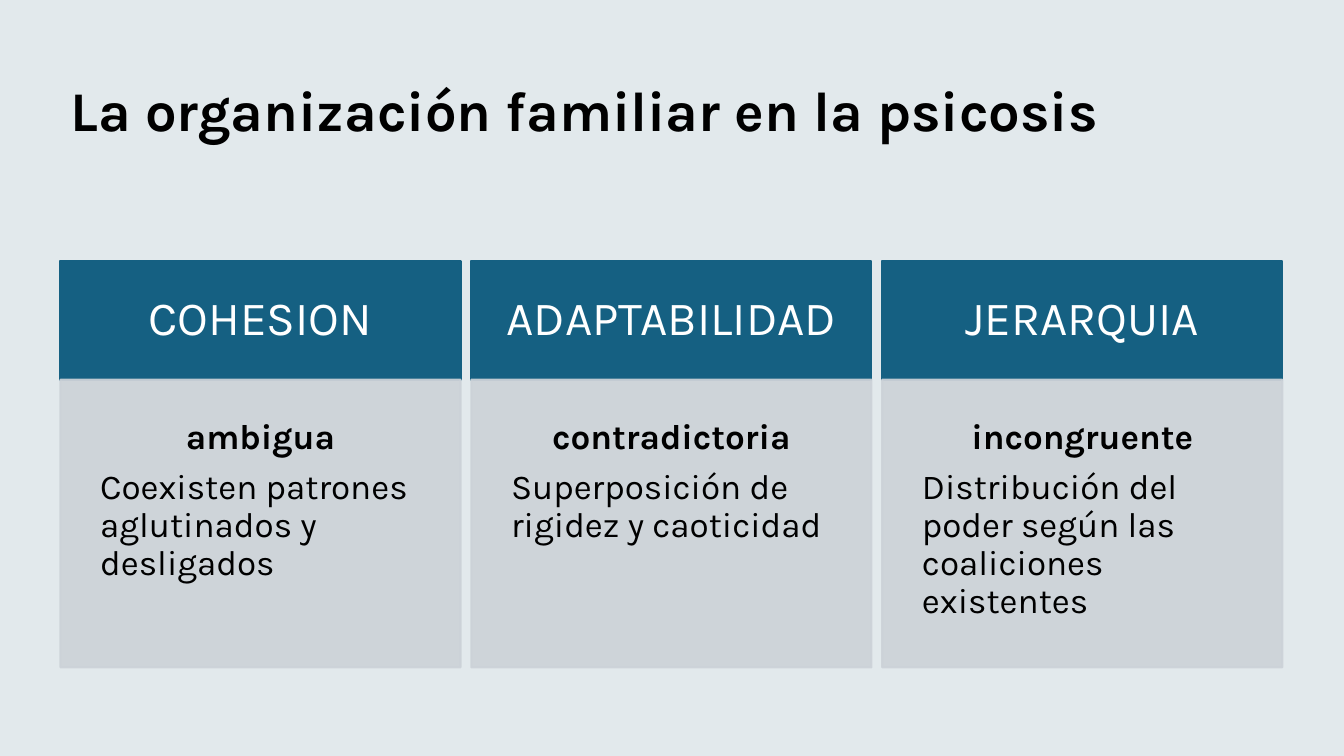
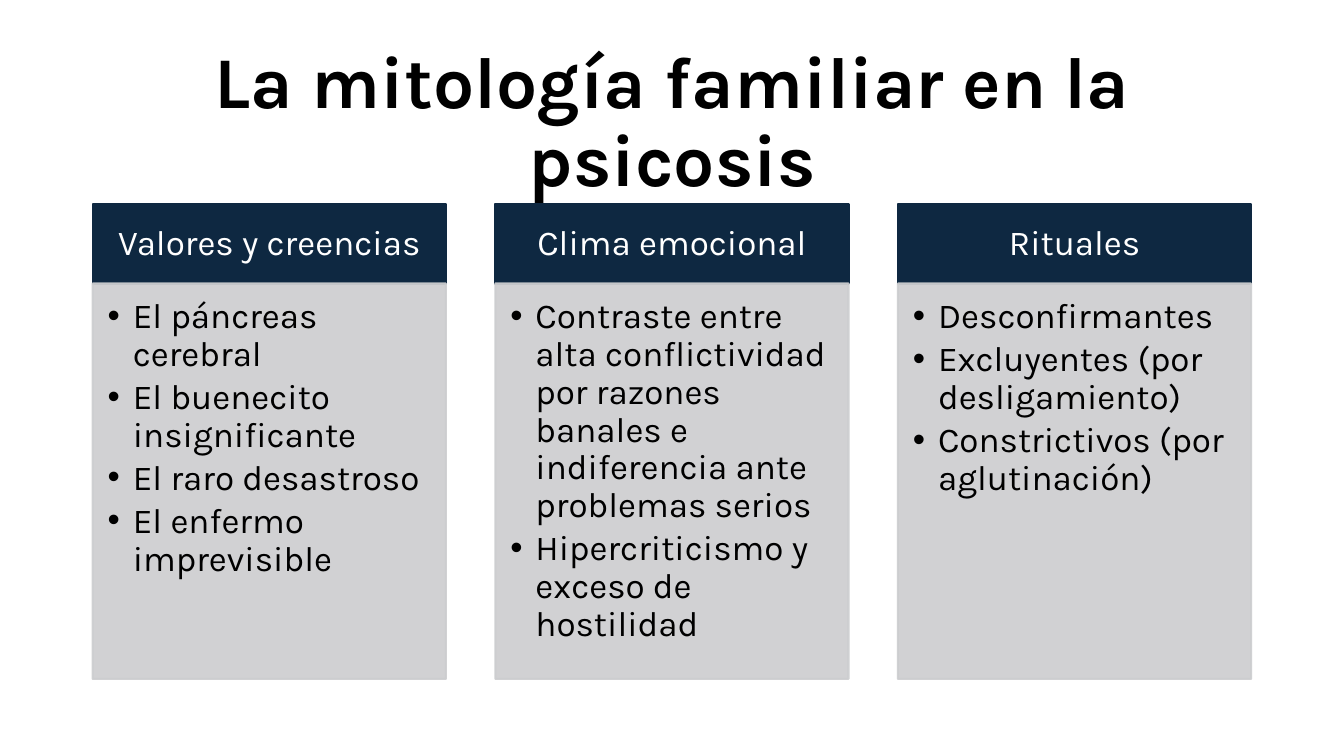
from dataclasses import dataclass

from lxml import etree
from pptx import Presentation
from pptx.dml.color import RGBColor
from pptx.enum import shapes, text
from pptx.oxml import ns
from pptx.util import Pt

FONT = "Karla"
BLACK = RGBColor(0x00, 0x00, 0x00)
WHITE = RGBColor(0xFF, 0xFF, 0xFF)
PALE_BLUE = RGBColor(0xE2, 0xE9, 0xEC)
TEAL = RGBColor(0x15, 0x60, 0x82)
BLUE_GREY = RGBColor(0xCC, 0xD2, 0xD8)
NAVY = RGBColor(0x0E, 0x28, 0x41)
GREY = RGBColor(0xCC, 0xCD, 0xCF)

BODY_SIZE = 25
BODY_OPACITY = 90
LINE_SPACING = 0.9
BULLET_INDENT = 18

LEFT = text.PP_ALIGN.LEFT
CENTER = text.PP_ALIGN.CENTER
TOP = text.MSO_ANCHOR.TOP
MIDDLE = text.MSO_ANCHOR.MIDDLE


@dataclass(frozen=True)
class Box:
    left: float
    top: float
    width: float
    height: float


@dataclass(frozen=True)
class Line:
    wording: str
    size: float = BODY_SIZE
    color: RGBColor = BLACK
    bold: bool = False
    align: text.PP_ALIGN = LEFT
    space_after: float = 0
    bullet: bool = False


@dataclass(frozen=True)
class Column:
    heading: str
    lines: list[Line]


@dataclass(frozen=True)
class ColumnStyle:
    """Geometry and look of a row of headed columns, in points."""
    first: Box  # heading of the first column
    pitch: float
    body_height: float
    heading_size: float
    heading_color: RGBColor
    body_color: RGBColor
    heading_insets: tuple[float, float, float, float]
    body_insets: tuple[float, float, float, float]


@dataclass(frozen=True)
class Topic:
    title: Line
    title_box: Box
    background: RGBColor
    style: ColumnStyle
    columns: list[Column]


def trait(name: str, description: str) -> list[Line]:
    return [Line(name, bold=True, align=CENTER, space_after=8.75),
            Line(description, space_after=8.75)]


def bullets(*items: str) -> list[Line]:
    return [Line(item, space_after=3.75, bullet=True) for item in items]


TOPICS = [
    Topic(
        Line("La organización familiar en la psicosis", 40, bold=True),
        Box(43.2, 28.8, 873.4, 104.4),
        PALE_BLUE,
        ColumnStyle(Box(43.2, 186.2, 285.8, 85), 293.5, 205.5, 34, TEAL, BLUE_GREY,
                    (22.4, 22.4, 22.4, 22.4), (28.4, 28.4, 28.4, 28.4)),
        [
            Column("COHESION", trait("ambigua", "Coexisten patrones aglutinados y desligados")),
            Column("ADAPTABILIDAD", trait("contradictoria", "Superposición de rigidez y caoticidad")),
            Column("JERARQUIA", trait("incongruente",
                                      "Distribución del poder según las coaliciones existentes")),
        ],
    ),
    Topic(
        Line("La mitología familiar en la psicosis", 52, bold=True, align=CENTER),
        Box(66.2, 43.9, 828, 89.3),
        WHITE,
        ColumnStyle(Box(66.2, 146, 252.3, 56.5), 287.6, 282.5, BODY_SIZE, NAVY, GREY,
                    (13.7, 7.9, 13.7, 7.9), (10.7, 10.7, 13.7, 15.8)),
        [
            Column("Valores y creencias", bullets(
                "El páncreas cerebral", "El buenecito insignificante",
                "El raro desastroso", "El enfermo imprevisible")),
            Column("Clima emocional", bullets(
                "Contraste entre alta conflictividad por razones banales "
                "e indiferencia ante problemas serios",
                "Hipercriticismo y exceso de hostilidad")),
            Column("Rituales", bullets(
                "Desconfirmantes", "Excluyentes (por desligamiento)",
                "Constrictivos (por aglutinación)")),
        ],
    ),
]


def add_bullet(paragraph) -> None:
    properties = paragraph._p.get_or_add_pPr()
    properties.set("marL", str(Pt(BULLET_INDENT)))
    properties.set("indent", str(-Pt(BULLET_INDENT)))
    etree.SubElement(properties, ns.qn("a:buFont"), typeface="Arial")
    etree.SubElement(properties, ns.qn("a:buChar"), char="•")


def write(frame, lines: list[Line], anchor: text.MSO_ANCHOR,
          insets: tuple[float, float, float, float] = (7.2, 3.6, 7.2, 3.6)) -> None:
    frame.word_wrap = True
    frame.auto_size = text.MSO_AUTO_SIZE.NONE
    frame.vertical_anchor = anchor
    (frame.margin_left, frame.margin_top,
     frame.margin_right, frame.margin_bottom) = map(Pt, insets)
    for index, line in enumerate(lines):
        paragraph = frame.add_paragraph() if index else frame.paragraphs[0]
        paragraph.alignment = line.align
        paragraph.line_spacing = LINE_SPACING
        paragraph.space_before = Pt(0)
        paragraph.space_after = Pt(line.space_after)
        if line.bullet:
            add_bullet(paragraph)
        run = paragraph.add_run()
        run.text = line.wording
        run.font.name = FONT
        run.font.size = Pt(line.size)
        run.font.bold = line.bold
        run.font.color.rgb = line.color


def add_panel(slide, box: Box, color: RGBColor, opacity: int = 100):
    panel = slide.shapes.add_shape(shapes.MSO_SHAPE.RECTANGLE, Pt(box.left), Pt(box.top),
                                   Pt(box.width), Pt(box.height))
    panel.shadow.inherit = False
    panel.fill.solid()
    panel.fill.fore_color.rgb = color
    panel.line.color.rgb = color
    panel.line.width = Pt(1.5)
    if opacity < 100:
        for tint in panel._element.spPr.iter(ns.qn("a:srgbClr")):
            etree.SubElement(tint, ns.qn("a:alpha"), val=str(opacity * 1000))
    return panel


def add_column(slide, column: Column, index: int, style: ColumnStyle) -> None:
    first = style.first
    left = first.left + index * style.pitch
    heading = add_panel(slide, Box(left, first.top, first.width, first.height),
                        style.heading_color)
    heading_line = Line(column.heading, style.heading_size, WHITE, align=CENTER,
                        space_after=0.35 * style.heading_size)
    write(heading.text_frame, [heading_line], MIDDLE, style.heading_insets)
    body = add_panel(slide, Box(left, first.top + first.height, first.width, style.body_height),
                     style.body_color, BODY_OPACITY)
    write(body.text_frame, column.lines, TOP, style.body_insets)


def add_topic(deck, topic: Topic) -> None:
    slide = deck.slides.add_slide(deck.slide_layouts.get_by_name("Title Only"))
    slide.background.fill.solid()
    slide.background.fill.fore_color.rgb = topic.background
    title, box = slide.shapes.title, topic.title_box
    title.left, title.top = Pt(box.left), Pt(box.top)
    title.width, title.height = Pt(box.width), Pt(box.height)
    write(title.text_frame, [topic.title], MIDDLE)
    for index, column in enumerate(topic.columns):
        add_column(slide, column, index, topic.style)


def main() -> None:
    deck = Presentation()
    deck.slide_width, deck.slide_height = Pt(960), Pt(540)
    for topic in TOPICS:
        add_topic(deck, topic)
    deck.save("out.pptx")


if __name__ == "__main__":
    main()
